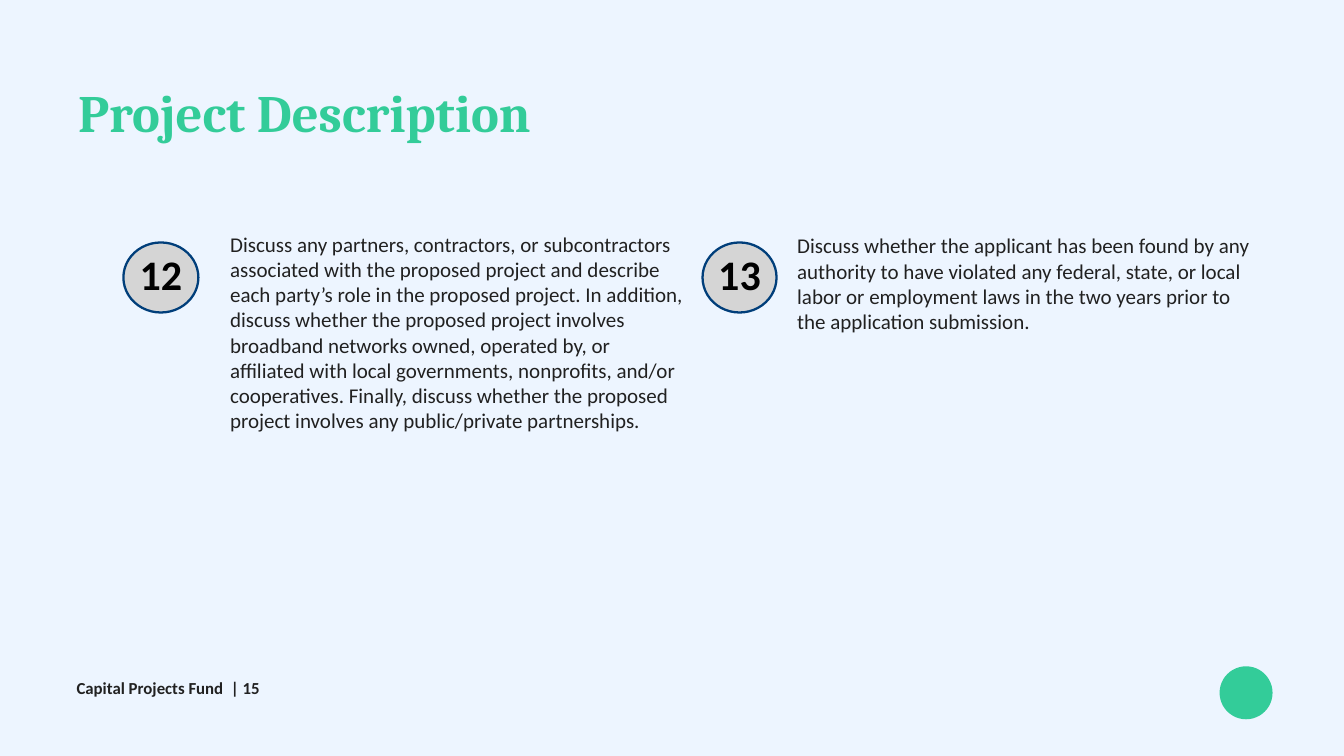
from dataclasses import dataclass

from pptx import Presentation
from pptx.dml.color import RGBColor
from pptx.enum.shapes import MSO_SHAPE
from pptx.enum.text import MSO_ANCHOR, MSO_AUTO_SIZE, PP_ALIGN
from pptx.util import Cm, Pt


@dataclass(frozen=True)
class Theme:
    background: RGBColor = RGBColor(0xED, 0xF5, 0xFF)
    accent: RGBColor = RGBColor(0x33, 0xCC, 0x99)
    badge: RGBColor = RGBColor(0xD5, 0xD5, 0xD5)
    badge_line: RGBColor = RGBColor(0x00, 0x3E, 0x7A)
    number: RGBColor = RGBColor(0x00, 0x00, 0x00)
    text: RGBColor = RGBColor(0x21, 0x21, 0x21)
    heading_font: str = "Cambria"
    body_font: str = "Calibri"
    title_size: int = 75
    number_size: int = 60
    body_size: int = 30
    footer_size: int = 24


THEME = Theme()

# Number, badge left and width, text left, top and height (cm), wording
QUESTIONS = [
    ("12", 6.22, 3.78, 11.35, 11.53, 11.84,
     "Discuss any partners, contractors, or subcontractors associated with "
     "the proposed project and describe each party’s role in the proposed "
     "project. In addition, discuss whether the proposed project involves "
     "broadband networks owned, operated by, or affiliated with local "
     "governments, nonprofits, and/or cooperatives. Finally, discuss whether "
     "the proposed project involves any public/private partnerships."),
    ("13", 35.41, 3.73, 39.93, 11.61, 8.08,
     "Discuss whether the applicant has been found by any authority to have "
     "violated any federal, state, or local labor or employment laws in the "
     "two years prior to the application submission."),
]
BADGE_TOP, BADGE_HEIGHT = 12.22, 3.53
QUESTION_WIDTH = 23.55


def write(shape, text, *, size, color=THEME.text, font=THEME.body_font,
          bold=False, align=PP_ALIGN.LEFT, anchor=MSO_ANCHOR.TOP,
          spacing=None, inset=None):
    """Put one formatted paragraph into a shape."""
    frame = shape.text_frame
    frame.word_wrap = True
    frame.auto_size = MSO_AUTO_SIZE.NONE
    frame.vertical_anchor = anchor
    if inset is not None:
        frame.margin_left = frame.margin_right = Cm(inset)
        frame.margin_top = frame.margin_bottom = Cm(inset)
    paragraph = frame.paragraphs[0]
    paragraph.alignment = align
    paragraph.line_spacing = spacing
    run = paragraph.add_run()
    run.text = text
    run.font.name = font
    run.font.size = Pt(size)
    run.font.bold = bold
    run.font.color.rgb = color


def add_circle(slide, left, top, width, height, fill, line=None):
    circle = slide.shapes.add_shape(
        MSO_SHAPE.OVAL, Cm(left), Cm(top), Cm(width), Cm(height))
    circle.shadow.inherit = False
    circle.fill.solid()
    circle.fill.fore_color.rgb = fill
    if line is None:
        circle.line.fill.background()
    else:
        circle.line.color.rgb = line
        circle.line.width = Pt(3.25)
    return circle


def add_text(slide, left, top, width, height, text, **style):
    box = slide.shapes.add_textbox(Cm(left), Cm(top), Cm(width), Cm(height))
    write(box, text, **style)


def add_title(slide, text):
    title = slide.shapes.title
    title.left, title.top = Cm(3.68), Cm(4.24)
    title.width, title.height = Cm(60.35), Cm(3.15)
    write(title, text, size=THEME.title_size, color=THEME.accent,
          font=THEME.heading_font, bold=True, spacing=0.9)


def add_question(slide, number, badge_left, badge_width,
                 text_left, text_top, text_height, text):
    badge = add_circle(slide, badge_left, BADGE_TOP, badge_width, BADGE_HEIGHT,
                       THEME.badge, THEME.badge_line)
    write(badge, number, size=THEME.number_size, color=THEME.number, bold=True,
          align=PP_ALIGN.CENTER, anchor=MSO_ANCHOR.MIDDLE, spacing=0.85,
          inset=0.13)
    add_text(slide, text_left, text_top, QUESTION_WIDTH, text_height, text,
             size=THEME.body_size)


def main():
    deck = Presentation()
    deck.slide_width, deck.slide_height = Cm(67.74), Cm(38.1)
    slide = deck.slides.add_slide(deck.slide_layouts[5])
    slide.background.fill.solid()
    slide.background.fill.fore_color.rgb = THEME.background

    # Corner dot and heading
    add_circle(slide, 61.47, 33.58, 2.67, 2.67, THEME.accent)
    add_title(slide, "Project Description")

    # Numbered questions
    for question in QUESTIONS:
        add_question(slide, *question)

    # Footer
    add_text(slide, 3.61, 34.16, 48.72, 1.22, "Capital Projects Fund  | 15",
             size=THEME.footer_size, bold=True, spacing=0.9)

    deck.save("out.pptx")


if __name__ == "__main__":
    main()
